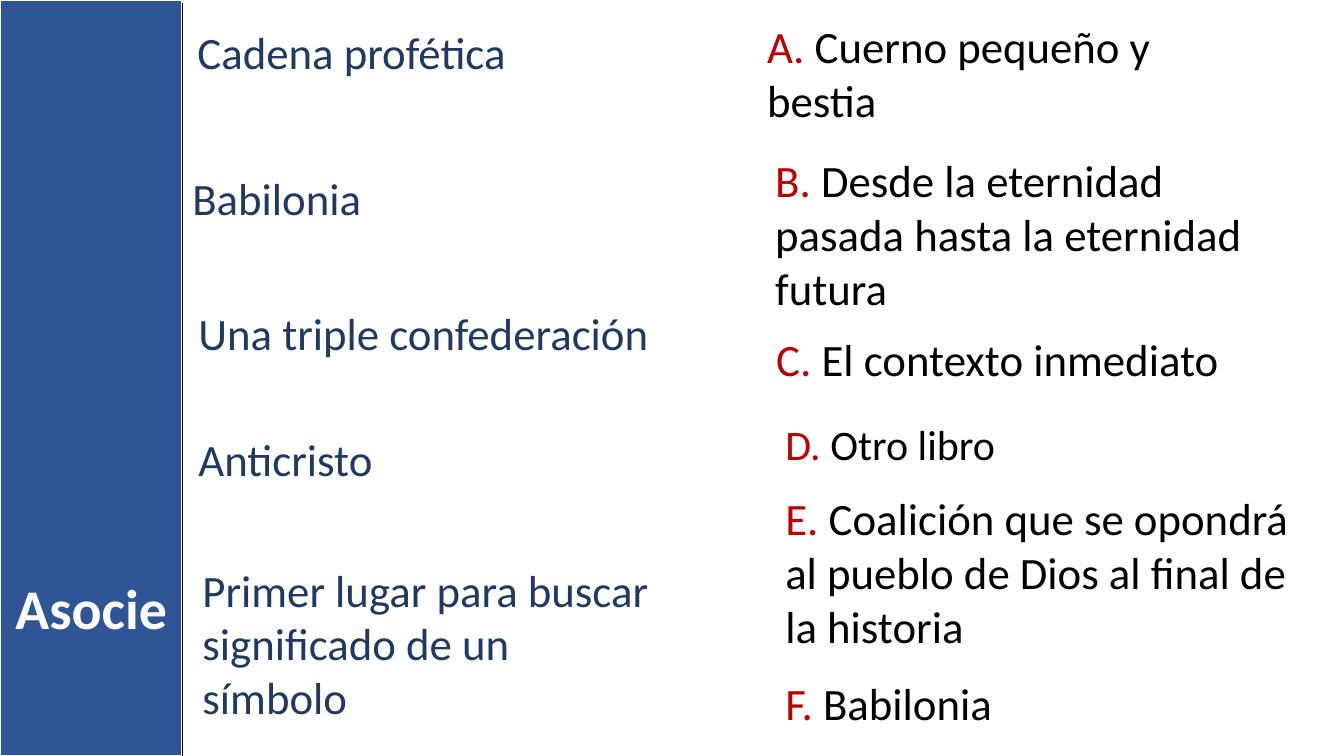
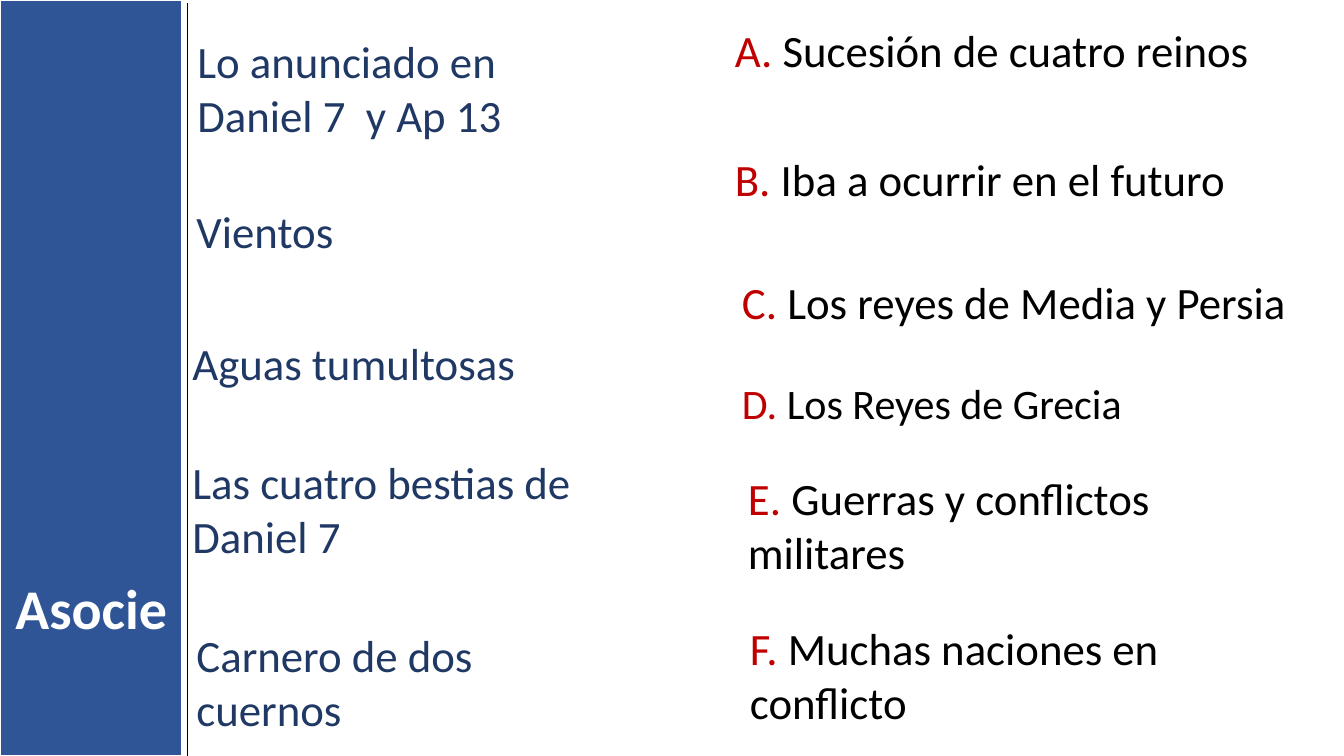
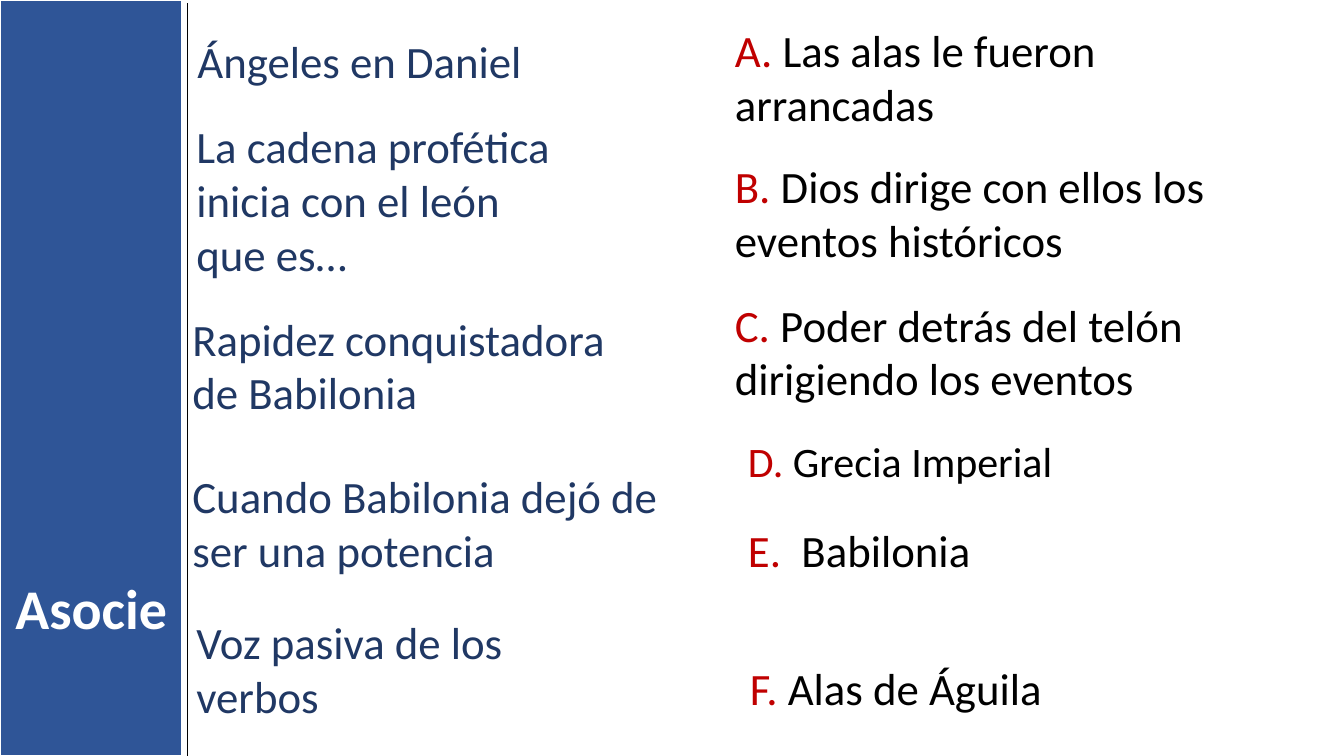
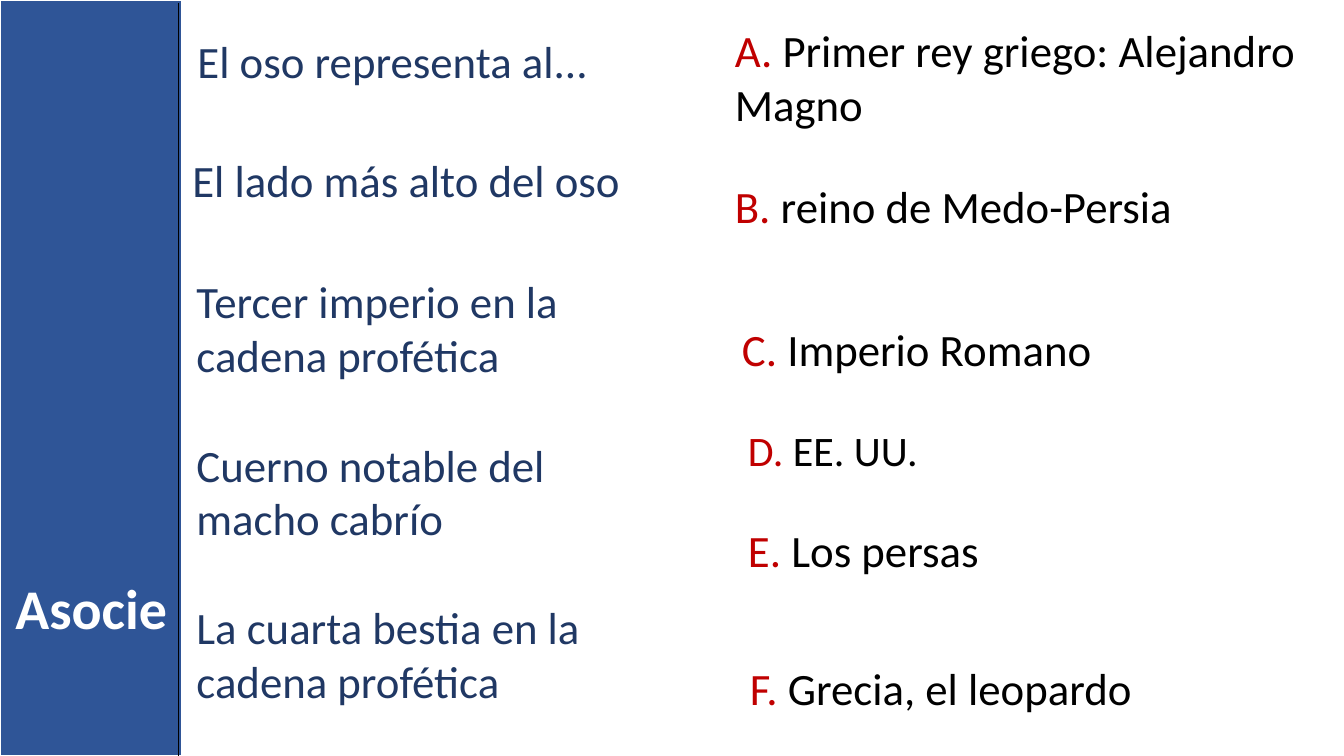
from pptx import Presentation
from pptx.dml.color import RGBColor
from pptx.enum.shapes import MSO_CONNECTOR, MSO_SHAPE
from pptx.enum.text import MSO_ANCHOR, MSO_AUTO_SIZE, PP_ALIGN
from pptx.oxml.ns import qn
from pptx.util import Inches, Pt
from lxml import etree

RECT = MSO_SHAPE.RECTANGLE
LINE = MSO_CONNECTOR.STRAIGHT
TOP = MSO_ANCHOR.TOP
GROW = MSO_AUTO_SIZE.SHAPE_TO_FIT_TEXT
CENTER = PP_ALIGN.CENTER

WIDE, HIGH = 13.33, 7.5
BAND = 1.81
TITLE = "Asocie"
BLUE, NAVY, RED = "2F5597", "203864", "C00000"
WHITE, BLACK = "FFFFFF", "000000"
BODY = {"name": "Calibri", "size": Pt(32)}
SMALL = {"name": "Calibri", "size": Pt(30)}
HEAD = {"name": "Calibri", "size": Pt(40), "bold": True}

# terms and answers: left, top, width, lines, text
SLIDES = [
    {
        "rule": 1.81,
        "terms": [
            (1.86, 0.2, 5.11, 1, "Cadena profética"),
            (1.81, 1.64, 4.94, 1, "Babilonia"),
            (1.87, 2.98, 5.1, 1, "Una triple confederación"),
            (1.87, 4.23, 4.94, 1, "Anticristo"),
            (1.91, 5.53, 4.77, 3, "Primer lugar para buscar significado de un símbolo"),
        ],
        "answers": [
            (7.51, 0.14, 5.04, 2, "Cuerno pequeño y bestia"),
            (7.59, 1.47, 5.29, 3, "Desde la eternidad pasada hasta la eternidad futura"),
            (7.6, 3.24, 4.88, 1, "El contexto inmediato"),
            (7.69, 4.1, 5.29, 1, "Otro libro"),
            (7.69, 4.82, 5.53, 3, "Coalición que se opondrá al pueblo de Dios al final de la historia"),
            (7.69, 6.65, 4.97, 1, "Babilonia"),
        ],
    },
    {
        "rule": 1.86,
        "terms": [
            (1.86, 0.29, 4.4, 2, "Lo anunciado en Daniel 7  y Ap 13"),
            (1.85, 1.97, 2.85, 1, "Vientos"),
            (1.81, 3.28, 4.46, 1, "Aguas tumultosas"),
            (1.81, 4.46, 4.94, 2, "Las cuatro bestias de Daniel 7"),
            (1.85, 6.18, 4.46, 2, "Carnero de dos cuernos"),
        ],
        "answers": [
            (7.19, 0.18, 5.36, 1, "Sucesión de cuatro reinos"),
            (7.19, 1.46, 5.96, 1, "Iba a ocurrir en el futuro"),
            (7.26, 2.68, 5.6, 1, "Los reyes de Media y Persia"),
            (7.26, 3.7, 5.23, 1, "Los Reyes de Grecia"),
            (7.32, 4.62, 5.53, 2, "Guerras y conflictos militares"),
            (7.34, 6.11, 5.67, 2, "Muchas naciones en conflicto"),
        ],
    },
    {
        "rule": 1.86,
        "terms": [
            (1.86, 0.29, 4.62, 1, "Ángeles en Daniel"),
            (1.85, 1.13, 3.77, 3, "La cadena profética inicia con el león que es…"),
            (1.81, 3.04, 4.46, 2, "Rapidez conquistadora de Babilonia"),
            (1.81, 4.6, 4.94, 2, "Cuando Babilonia dejó de ser una potencia"),
            (1.85, 6.05, 4.46, 2, "Voz pasiva de los verbos"),
        ],
        "answers": [
            (7.19, 0.18, 5.36, 2, "Las alas le fueron arrancadas"),
            (7.19, 1.53, 5.96, 2, "Dios dirige con ellos los eventos históricos"),
            (7.19, 2.9, 5.6, 2, "Poder detrás del telón dirigiendo los eventos"),
            (7.32, 4.27, 5.23, 1, "Grecia Imperial"),
            (7.32, 5.14, 5.53, 1, " Babilonia"),
            (7.34, 6.51, 5.67, 1, "Alas de Águila"),
        ],
    },
    {
        "rule": 1.77,
        "terms": [
            (1.86, 0.29, 4.89, 1, "El oso representa al..."),
            (1.81, 1.47, 5.16, 1, "El lado más alto del oso"),
            (1.85, 2.67, 4.46, 2, "Tercer imperio en la cadena profética"),
            (1.85, 4.29, 4.94, 2, "Cuerno notable del macho cabrío"),
            (1.85, 5.9, 4.46, 2, "La cuarta bestia en la cadena profética"),
        ],
        "answers": [
            (7.19, 0.18, 5.96, 2, "Primer rey griego: Alejandro Magno"),
            (7.19, 1.72, 5.96, 1, "reino de Medo-Persia"),
            (7.26, 3.14, 5.6, 1, "Imperio Romano"),
            (7.32, 4.16, 5.23, 1, "EE. UU."),
            (7.32, 5.14, 5.53, 1, "Los persas"),
            (7.34, 6.51, 5.67, 1, "Grecia, el leopardo"),
        ],
    },
]


def color(code):
    return RGBColor.from_string(code)


def add_run(para, text, code, style):
    run = para.add_run()
    run.text = text
    run.font.color.rgb = color(code)
    for key, value in style.items():
        setattr(run.font, key, value)


def add_text(slide, left, top, width, lines, runs, style=BODY):
    high = 0.1 + lines * style["size"].pt * 0.017
    box = slide.shapes.add_textbox(*map(Inches, (left, top, width, high)))
    frame = box.text_frame
    frame.word_wrap = True
    frame.auto_size = GROW
    for text, code in runs:
        add_run(frame.paragraphs[0], text, code, style)


def add_band(slide):
    band = slide.shapes.add_shape(RECT, 0, 0, Inches(BAND), Inches(HIGH))
    band.shadow.inherit = False
    band.fill.solid()
    band.fill.fore_color.rgb = color(BLUE)
    band.line.color.rgb = color(WHITE)
    band.line.width = Pt(1.5)


def add_title(slide):
    title = slide.shapes.title
    place = {"left": 0, "top": 5.64, "width": BAND, "height": 0.77}
    for key, value in place.items():
        setattr(title, key, Inches(value))
    frame = title.text_frame
    frame.word_wrap = True
    frame.auto_size = GROW
    frame.vertical_anchor = TOP
    para = frame.paragraphs[0]
    para.alignment = CENTER
    add_run(para, TITLE, WHITE, HEAD)
    title.element.getparent().append(title.element)


def add_rule(slide, left):
    ends = map(Inches, (left, 0.03, left, HIGH))
    rule = slide.shapes.add_connector(LINE, *ends)
    rule.line.color.rgb = color(BLACK)
    rule.line.width = Pt(1)
    etree.SubElement(rule.element.spPr, qn("a:effectLst"))


def main():
    deck = Presentation()
    deck.slide_width, deck.slide_height = Inches(WIDE), Inches(HIGH)
    for data in SLIDES:
        slide = deck.slides.add_slide(deck.slide_layouts[5])
        add_band(slide)
        for *place, text in data["terms"]:
            add_text(slide, *place, [(text, NAVY)])
        for mark, (*place, text) in zip("ABCDEF", data["answers"]):
            style = SMALL if mark == "D" else BODY
            add_text(slide, *place, [(f"{mark}. ", RED), (text, BLACK)], style)
        add_title(slide)
        add_rule(slide, data["rule"])
    deck.save("out.pptx")


if __name__ == "__main__":
    main()
